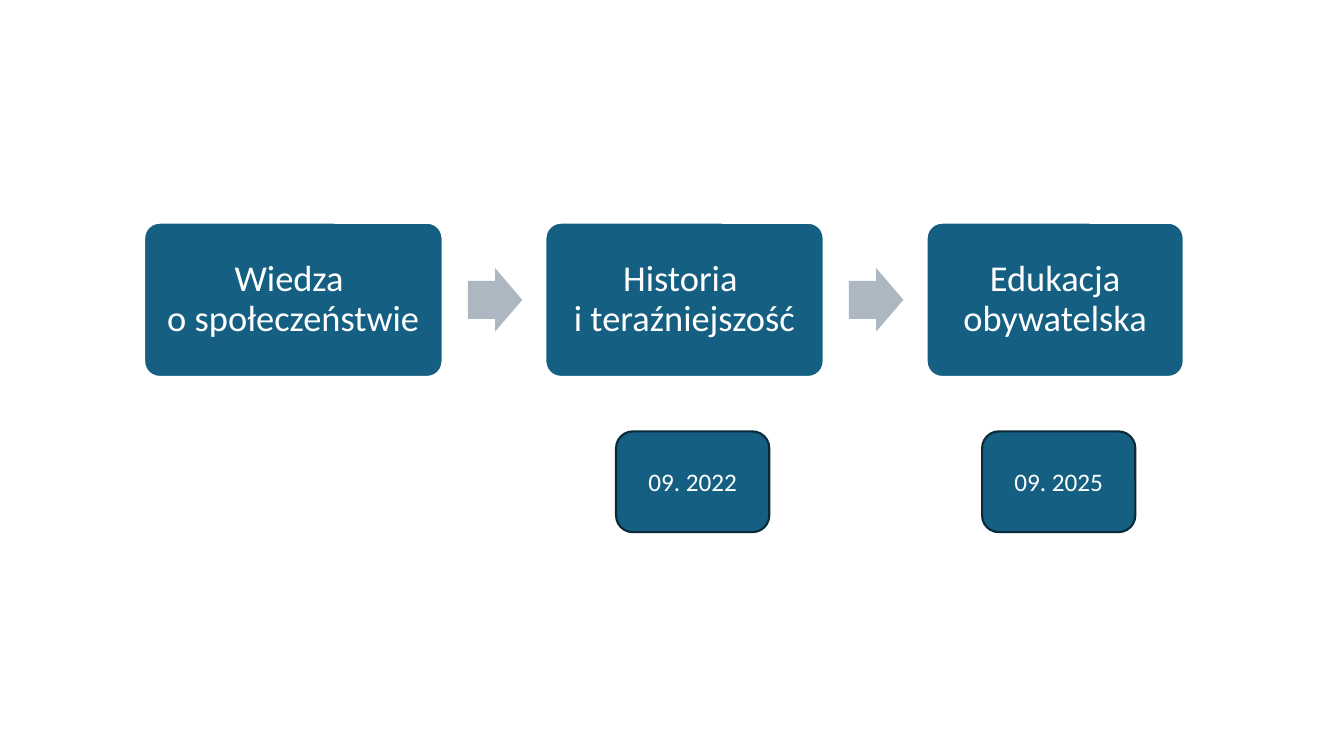
from pptx import Presentation
from pptx import util as u
from pptx.dml.color import RGBColor
from pptx.enum import shapes, text

# Content: lines of each subject, box width, start date and its left edge
SUBJECTS = [
    {"lines": ["Wiedza ", "o społeczeństwie "], "width": 2.96},
    {"lines": ["Historia ", "i teraźniejszość"], "width": 2.76,
     "date": "09. 2022", "date_left": 6.11},
    {"lines": ["Edukacja obywatelska"], "width": 2.55,
     "date": "09. 2025", "date_left": 9.74},
]
COLORS = {"box": "156082", "arrow": "ACB7C1", "date_line": "092A39", "white": "FFFFFF"}
FONT = "Calibri"

# Layout in inches
SLIDE_WIDTH, SLIDE_HEIGHT = 13.33, 7.5
FLOW_LEFT, FLOW_TOP, BOX_HEIGHT = 1.43, 2.21, 1.53
ARROW_WIDTH, ARROW_HEIGHT, ARROW_OFFSET = 0.54, 0.63, 0.25
BOX_GAP = 1.02
DATE_TOP, DATE_WIDTH, DATE_HEIGHT = 4.28, 1.52, 1.0
BOX_INSET = 0.16


def color(name):
    return RGBColor.from_string(COLORS[name])


def add_block(slide, kind, box, fill, line=None, adjustments=()):
    shape = slide.shapes.add_shape(kind, *(u.Inches(value) for value in box))
    shape.shadow.inherit = False
    shape.fill.solid()
    shape.fill.fore_color.rgb = color(fill)
    if line:
        shape.line.color.rgb = color(line)
        shape.line.width = u.Pt(1.5)
    else:
        shape.line.fill.background()
    for index, value in enumerate(adjustments):
        shape.adjustments[index] = value
    return shape


def write(shape, lines, size, spacing=1.0, inset=None):
    frame = shape.text_frame
    frame.word_wrap = True
    frame.vertical_anchor = text.MSO_ANCHOR.MIDDLE
    if inset is not None:
        frame.margin_left = frame.margin_right = u.Inches(inset)
        frame.margin_top = frame.margin_bottom = u.Inches(inset)
    paragraph = frame.paragraphs[0]
    paragraph.alignment = text.PP_ALIGN.CENTER
    paragraph.line_spacing = spacing
    for index, line in enumerate(lines):
        if index:
            paragraph.add_line_break()
        run = paragraph.add_run()
        run.text = line
        run.font.name = FONT
        run.font.size = u.Pt(size)
        run.font.color.rgb = color("white")


def main():
    presentation = Presentation()
    presentation.slide_width = u.Inches(SLIDE_WIDTH)
    presentation.slide_height = u.Inches(SLIDE_HEIGHT)
    slide = presentation.slides.add_slide(presentation.slide_layouts[6])
    kinds = shapes.MSO_SHAPE

    # Subject boxes joined by arrows
    left = FLOW_LEFT
    arrow_top = FLOW_TOP + (BOX_HEIGHT - ARROW_HEIGHT) / 2
    for index, subject in enumerate(SUBJECTS):
        if index:
            arrow_left = left - BOX_GAP + ARROW_OFFSET
            add_block(slide, kinds.RIGHT_ARROW,
                      (arrow_left, arrow_top, ARROW_WIDTH, ARROW_HEIGHT),
                      "arrow", adjustments=(0.6, 0.5))
        box = add_block(slide, kinds.ROUNDED_RECTANGLE,
                        (left, FLOW_TOP, subject["width"], BOX_HEIGHT),
                        "box", "white", (0.1,))
        write(box, subject["lines"], 26, 0.9, BOX_INSET)
        left += subject["width"] + BOX_GAP

    # Start dates
    for subject in SUBJECTS:
        if "date" in subject:
            date = add_block(slide, kinds.ROUNDED_RECTANGLE,
                             (subject["date_left"], DATE_TOP, DATE_WIDTH, DATE_HEIGHT),
                             "box", "date_line")
            write(date, [subject["date"]], 18)

    presentation.save("out.pptx")


if __name__ == "__main__":
    main()
